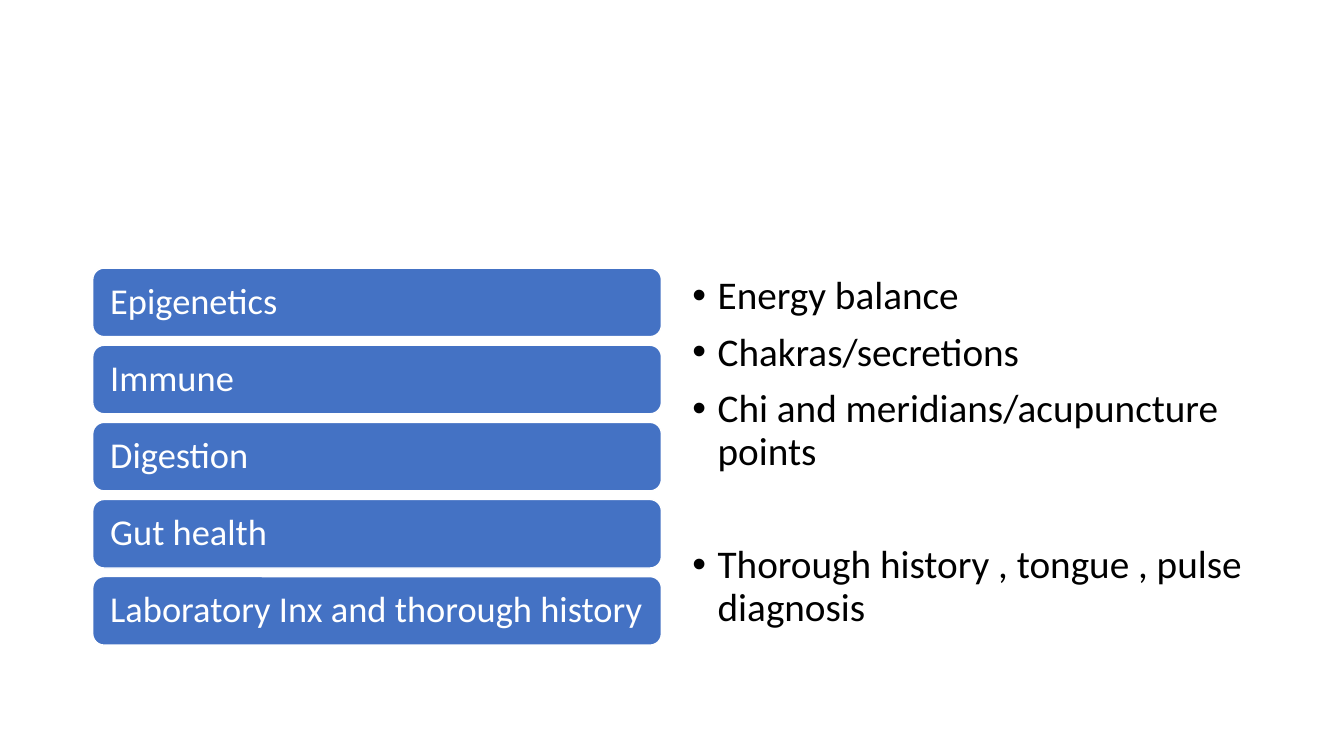
"""Build a slide with a stack of topic bars beside a bulleted list."""
from dataclasses import dataclass

from lxml.etree import SubElement
from pptx import Presentation
from pptx.dml.color import RGBColor
from pptx.enum.shapes import MSO_SHAPE as Shape
from pptx.enum.text import MSO_ANCHOR as Anchor, PP_ALIGN as Align
from pptx.oxml.ns import qn
from pptx.util import Inches, Pt

TOPICS = [
    "Epigenetics",
    "Immune",
    "Digestion",
    "Gut health",
    "Laboratory Inx and thorough history",
]
BULLETS = [
    ("Energy balance", 10),
    ("Chakras/secretions", 10),
    ("Chi and meridians/acupuncture points", 10),
    ("Thorough history , tongue , pulse diagnosis", 51),
]
BAR_LEFT, BAR_TOP, BAR_WIDTH, BAR_HEIGHT = 0.92, 2.66, 5.64, 0.68
BAR_PITCH = 0.765
BAR_INSET = 0.14
LIST_BOX = (6.77, 2.69, 5.67, 4.1)
BULLET_INDENT = 0.25


@dataclass(frozen=True)
class Theme:
    """Colours, font and type sizes."""
    font: str = "Calibri"
    bar: RGBColor = RGBColor(0x44, 0x72, 0xC4)
    light: RGBColor = RGBColor(0xFF, 0xFF, 0xFF)
    dark: RGBColor = RGBColor(0, 0, 0)
    bar_size: int = 26
    bullet_size: int = 28


THEME = Theme()


def write(paragraph, text, size, color):
    """Set a paragraph's text and format its run."""
    paragraph.text = text
    paragraph.alignment = Align.LEFT
    paragraph.line_spacing = 0.9
    font = paragraph.runs[0].font
    font.name, font.size = THEME.font, Pt(size)
    font.color.rgb = color


def add_bar(slide, index, topic):
    """Add one rounded topic bar to the stack."""
    top = BAR_TOP + index * BAR_PITCH
    shape = slide.shapes.add_shape(
        Shape.ROUNDED_RECTANGLE, Inches(BAR_LEFT), Inches(top),
        Inches(BAR_WIDTH), Inches(BAR_HEIGHT))
    shape.shadow.inherit = False
    shape.fill.solid()
    shape.fill.fore_color.rgb = THEME.bar
    shape.line.color.rgb = THEME.light
    shape.line.width = Pt(1)
    frame = shape.text_frame
    frame.word_wrap = True
    frame.vertical_anchor = Anchor.MIDDLE
    frame.margin_left = frame.margin_right = Inches(BAR_INSET)
    write(frame.paragraphs[0], topic, THEME.bar_size, THEME.light)


def add_bullet_mark(paragraph):
    """Give a paragraph a hanging round bullet."""
    properties = paragraph._p.get_or_add_pPr()
    properties.set("marL", str(Inches(BULLET_INDENT)))
    properties.set("indent", str(-Inches(BULLET_INDENT)))
    SubElement(properties, qn("a:buFont"), typeface="Arial")
    SubElement(properties, qn("a:buChar"), char="•")


def add_list(slide):
    """Add the bulleted list."""
    frame = slide.shapes.add_textbox(*map(Inches, LIST_BOX)).text_frame
    frame.word_wrap = True
    for index, (text, space_before) in enumerate(BULLETS):
        paragraph = frame.add_paragraph() if index else frame.paragraphs[0]
        write(paragraph, text, THEME.bullet_size, THEME.dark)
        paragraph.space_before = Pt(space_before)
        add_bullet_mark(paragraph)


def main():
    """Assemble and save the presentation."""
    presentation = Presentation()
    presentation.slide_width = Inches(13.33)
    presentation.slide_height = Inches(7.5)
    slide = presentation.slides.add_slide(presentation.slide_layouts[6])
    for index, topic in enumerate(TOPICS):
        add_bar(slide, index, topic)
    add_list(slide)
    presentation.save("out.pptx")


if __name__ == "__main__":
    main()
